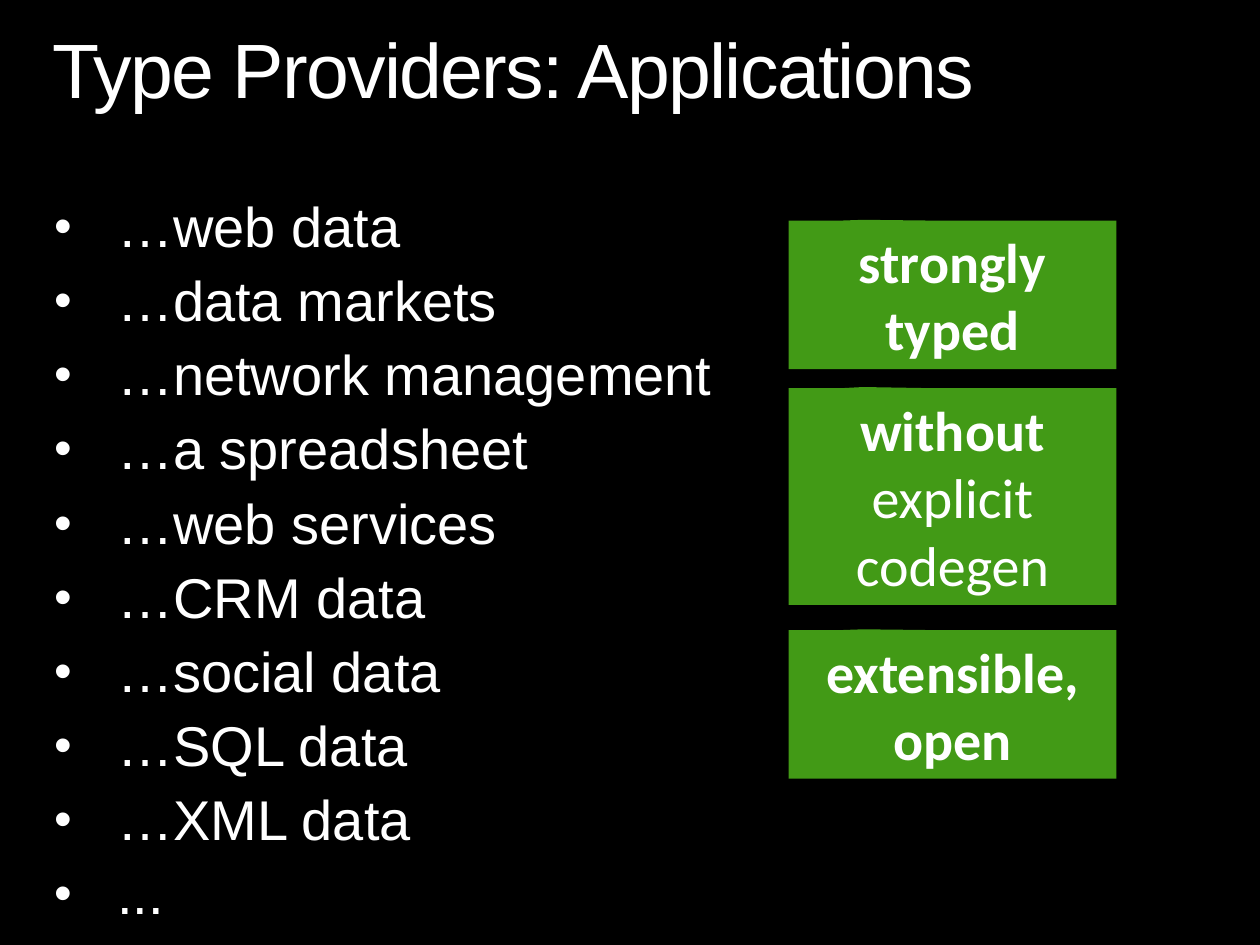
import pptx
import pptx.dml.color
import pptx.enum.shapes
import pptx.enum.text
import pptx.util
from lxml import etree
from pptx.oxml.ns import qn
from pptx.util import Inches

COLORS = {"background": "000000", "text": "FFFFFF", "callout": "429A16"}

APPLICATIONS = [
    "…web data", "…data markets", "…network management", "…a spreadsheet",
    "…web services", "…CRM data", "…social data", "…SQL data", "…XML data", "...",
]

# Top, height and (text, bold) runs of each callout
CALLOUTS = [
    (3.08, 1.72, [("without ", True), ("explicit codegen", False)]),
    (1.75, 1.18, [("strongly typed", True)]),
    (5, 1.18, [("extensible, open", True)]),
]


def rgb(name):
    return pptx.dml.color.RGBColor.from_string(COLORS[name])


def add_text(paragraph, text, size=32, font="Arial", bold=False, spacing=None):
    run = paragraph.add_run()
    run.text = text
    run.font.size = pptx.util.Pt(size)
    run.font.name = font
    run.font.bold = bold
    run.font.color.rgb = rgb("text")
    if spacing is not None:
        run.font._element.set("spc", str(spacing))


def set_frame(frame, side, edge, anchor):
    frame.word_wrap = True
    frame.auto_size = pptx.enum.text.MSO_AUTO_SIZE.SHAPE_TO_FIT_TEXT
    frame.margin_left = frame.margin_right = Inches(side)
    frame.margin_top = frame.margin_bottom = Inches(edge)
    frame.vertical_anchor = anchor


def add_bullet(paragraph):
    properties = paragraph._p.get_or_add_pPr()
    properties.set("marL", str(Inches(0.5)))
    properties.set("indent", str(-Inches(0.5)))
    etree.SubElement(properties, qn("a:buSzPct")).set("val", "90000")
    etree.SubElement(properties, qn("a:buFont")).set("typeface", "Arial")
    etree.SubElement(properties, qn("a:buChar")).set("char", "•")


def format_title(title):
    title.left, title.top = Inches(0.42), Inches(0.25)
    title.width, title.height = Inches(9.17), Inches(0.67)
    set_frame(title.text_frame, 0, 0, pptx.enum.text.MSO_ANCHOR.TOP)
    heading = title.text_frame.paragraphs[0]
    heading.alignment = pptx.enum.text.PP_ALIGN.LEFT
    heading.line_spacing = 0.9
    add_text(heading, "Type Providers: Applications", size=44, spacing=-100)


def add_applications(slide):
    box = slide.shapes.add_textbox(Inches(0.43), Inches(1.58), Inches(9.15), Inches(6.41))
    frame = box.text_frame
    set_frame(frame, 0, 0, pptx.enum.text.MSO_ANCHOR.TOP)
    for index, application in enumerate(APPLICATIONS):
        item = frame.add_paragraph() if index else frame.paragraphs[0]
        add_bullet(item)
        item.line_spacing = 0.9
        if index:
            item.space_before = pptx.util.Pt(7.8)
        add_text(item, application)


def add_callout(slide, top, height, runs):
    callout = slide.shapes.add_shape(
        pptx.enum.shapes.MSO_SHAPE.RECTANGULAR_CALLOUT,
        Inches(6.26), Inches(top), Inches(2.6), Inches(height))
    callout.adjustments[0] = -0.273
    callout.adjustments[1] = -0.505
    callout.shadow.inherit = False
    callout.fill.solid()
    callout.fill.fore_color.rgb = rgb("callout")
    callout.line.fill.background()
    set_frame(callout.text_frame, 0.1, 0.05, pptx.enum.text.MSO_ANCHOR.MIDDLE)
    label = callout.text_frame.paragraphs[0]
    label.alignment = pptx.enum.text.PP_ALIGN.CENTER
    for text, bold in runs:
        add_text(label, text, font="Calibri", bold=bold)


def main():
    deck = pptx.Presentation()
    deck.slide_width, deck.slide_height = Inches(10), Inches(7.5)
    slide = deck.slides.add_slide(deck.slide_layouts[5])
    slide.background.fill.solid()
    slide.background.fill.fore_color.rgb = rgb("background")

    # Heading and list of applications
    format_title(slide.shapes.title)
    add_applications(slide)

    # Benefits on the right
    for top, height, runs in CALLOUTS:
        add_callout(slide, top, height, runs)

    deck.save("out.pptx")


if __name__ == "__main__":
    main()
